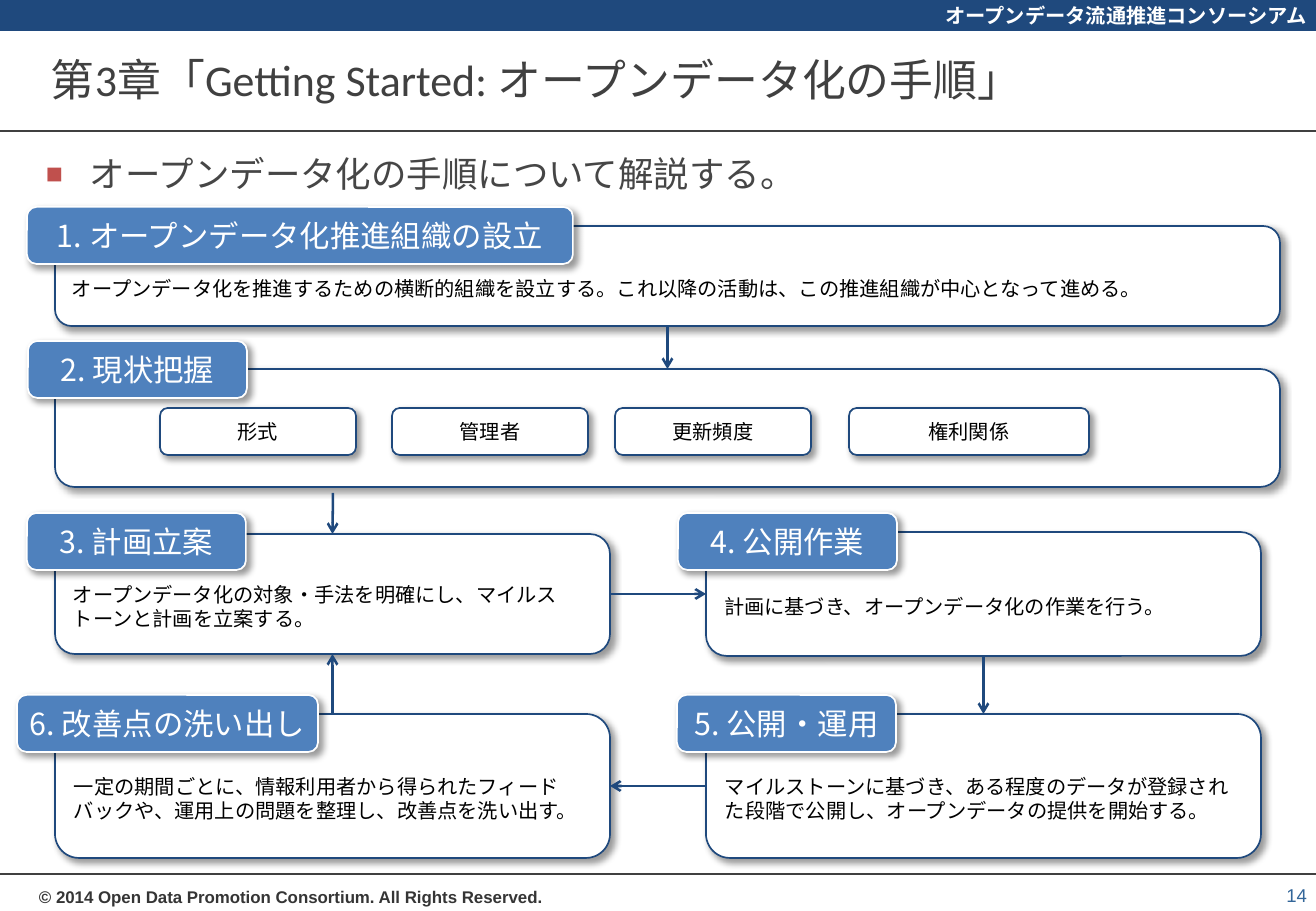
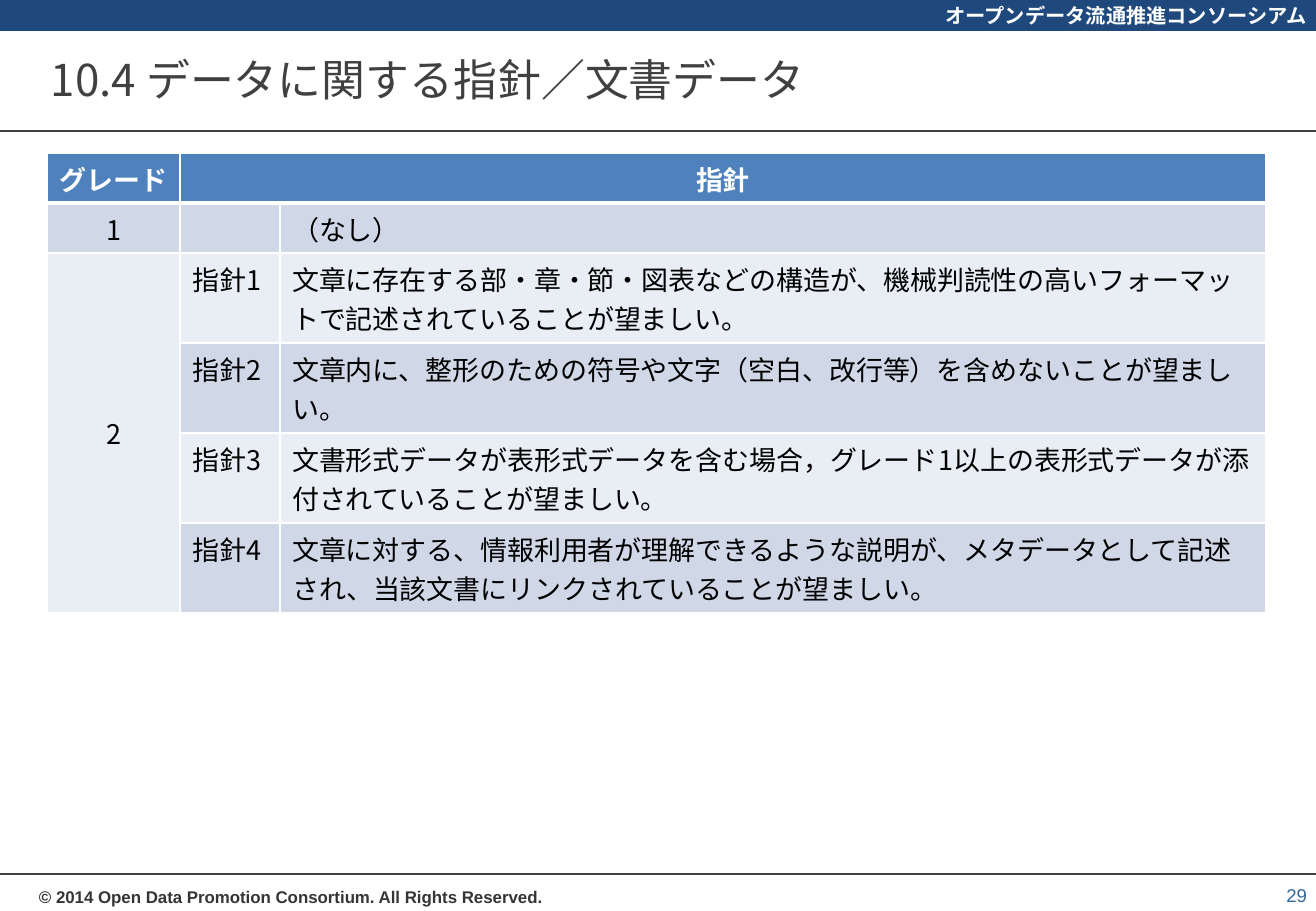
from lxml.etree import SubElement
from pptx import Presentation
from pptx.dml.color import RGBColor
from pptx.enum.shapes import MSO_CONNECTOR as LINE, MSO_SHAPE as SHAPE
from pptx.enum.text import MSO_ANCHOR as ANCHOR, PP_ALIGN as ALIGN
from pptx.oxml.ns import qn
from pptx.util import Emu, Pt

WIDTH, HEIGHT = 1316, 911
JP, LATIN, FOOT = "Noto Sans CJK JP", "Calibri", "Arial"
NAVY, BLUE, WHITE, BLACK = "1F497D", "4F81BD", "FFFFFF", "000000"
GRAY, BODY, RED = "404040", "464646", "C0504D"
COPY, PAGE = "353535", "336699"
BANDS = ("D0D8E8", "E9EDF4")
TOP, LEFT, BOTTOM, RIGHT = range(4)
PAD = (12, 6, 12, 6)
SLIM = (9, 5, 9, 5)
BLANK_LAYOUT = 6

# name: card box, badge box, text
CARDS = {
    1: ((55, 226, 1225, 100), (27, 207, 546), "オープンデータ化推進組織の設立",
        "オープンデータ化を推進するための横断的組織を設立する。これ以降の活動は、この推進組織が中心となって進める。"),
    2: ((55, 369, 1225, 118), (28, 341, 219), "現状把握", ""),
    3: ((55, 534, 555, 120), (27, 513, 219), "計画立案",
        "オープンデータ化の対象・手法を明確にし、マイルストーンと計画を立案する。"),
    4: ((706, 532, 555, 124), (678, 513, 219), "公開作業",
        "計画に基づき、オープンデータ化の作業を行う。"),
    5: ((706, 714, 555, 144), (677, 695, 219), "公開・運用",
        "マイルストーンに基づき、ある程度のデータが登録された段階で公開し、オープンデータの提供を開始する。"),
    6: ((55, 714, 555, 144), (17, 695, 301), "改善点の洗い出し",
        "一定の期間ごとに、情報利用者から得られたフィードバックや、運用上の問題を整理し、改善点を洗い出す。"),
}
ARROWS = [(1, BOTTOM, 2, TOP), (3, RIGHT, 4, LEFT), (4, BOTTOM, 5, TOP),
          (5, LEFT, 6, RIGHT), (6, TOP, 3, BOTTOM)]
CHIPS = [("形式", 160, 196), ("管理者", 392, 196),
         ("更新頻度", 615, 196), ("権利関係", 849, 240)]
GUIDELINES = [
    ("グレード", "指針", ""),
    ("1", "", "（なし）"),
    ("2", "指針1", "文章に存在する部・章・節・図表などの構造が、機械判読性の高いフォーマットで記述されていることが望ましい。"),
    ("", "指針2", "文章内に、整形のための符号や文字（空白、改行等）を含めないことが望ましい。"),
    ("", "指針3", "文書形式データが表形式データを含む場合，グレード1以上の表形式データが添付されていることが望ましい。"),
    ("", "指針4", "文章に対する、情報利用者が理解できるような説明が、メタデータとして記述され、当該文書にリンクされていることが望ましい。"),
]


def px(n):
    return Emu(n * 7526)


def rgb(color):
    return RGBColor.from_string(color)


def sub(parent, tag, **attrs):
    return SubElement(parent, qn(tag), attrs)


def write(tf, text, size, color, font=JP, bold=False, align=ALIGN.LEFT):
    tf.text = text
    p = tf.paragraphs[0]
    p.alignment = align
    for r in p.runs:
        r.font.size = Pt(size)
        r.font.bold = bold
        r.font.name = font
        r.font.color.rgb = rgb(color)
        sub(r._r.get_or_add_rPr(), "a:ea", typeface=JP)
    return p


def frame(sp, pad=PAD, anchor=ANCHOR.MIDDLE, wrap=True):
    tf = sp.text_frame
    tf.word_wrap = wrap
    tf.vertical_anchor = anchor
    tf.margin_left, tf.margin_top, tf.margin_right, tf.margin_bottom = map(px, pad)
    return tf


def add_text(s, box, text, size, color, pad=SLIM, anchor=ANCHOR.TOP, **style):
    sp = s.shapes.add_textbox(*map(px, box))
    return write(frame(sp, pad, anchor), text, size, color, **style)


def add_box(s, kind, box, fill, line, width):
    sp = s.shapes.add_shape(kind, *map(px, box))
    sp.shadow.inherit = False
    sp.fill.solid()
    sp.fill.fore_color.rgb = rgb(fill)
    sp.line.color.rgb = rgb(line)
    sp.line.width = Pt(width)
    return sp


def add_raised(s, box, fill=WHITE, line=NAVY):
    sp = add_box(s, SHAPE.ROUNDED_RECTANGLE, box, fill, line, 1)
    effects = sp._element.spPr.find(qn("a:effectLst"))
    shadow = sub(effects, "a:outerShdw", blurRad=str(Pt(4)), dist=str(Pt(3)),
                 dir="2700000", algn="tl", rotWithShape="0")
    sub(sub(shadow, "a:srgbClr", val=BLACK), "a:alpha", val="40000")
    return sp


def add_line(s, start, end, color, width, arrow=False):
    c = s.shapes.add_connector(LINE.STRAIGHT, *map(px, start + end))
    c.line.color.rgb = rgb(color)
    c.line.width = Pt(width)
    spPr = c._element.spPr
    if arrow:
        sub(spPr.find(qn("a:ln")), "a:tailEnd", type="arrow")
    sub(spPr, "a:effectLst")
    return c


def add_arrow(s, start=(0, 0), end=(0, 0)):
    return add_line(s, start, end, NAVY, 1.5, arrow=True)


def add_bullet(s, box, text):
    p = add_text(s, box, text, 21, BODY, pad=(0, 5, 0, 5))
    pPr = p._p.get_or_add_pPr()
    pPr.set("marL", str(px(44)))
    pPr.set("indent", str(px(-44)))
    sub(sub(pPr, "a:buClr"), "a:srgbClr", val=RED)
    sub(pPr, "a:buSzPct", val="80000")
    sub(pPr, "a:buFont", typeface=FOOT)
    sub(pPr, "a:buChar", char="■")


def add_page(prs, title, number, title_font=JP):
    s = prs.slides.add_slide(prs.slide_layouts[BLANK_LAYOUT])
    band = add_box(s, SHAPE.RECTANGLE, (0, 0, WIDTH, 30), NAVY, NAVY, 0.75)
    write(frame(band, SLIM), "オープンデータ流通推進コンソーシアム", 12, WHITE,
          bold=True, align=ALIGN.RIGHT)
    for y in (131, 874):
        add_line(s, (0, y), (WIDTH, y), GRAY, 1)
    add_text(s, (51, 40, 1214, 78), title, 26, GRAY, pad=(0, 0, 0, 0),
             anchor=ANCHOR.MIDDLE, font=title_font)
    add_text(s, (30, 882, 533, 29),
             "© 2014 Open Data Promotion Consortium. All Rights Reserved.",
             10, COPY, font=FOOT, bold=True)
    add_text(s, (1262, 877, 54, 34), str(number), 11, PAGE,
             anchor=ANCHOR.BOTTOM, font=FOOT, align=ALIGN.RIGHT)
    return s


def add_card(s, number, box, badge_box, heading, text):
    card = add_raised(s, box)
    if text:
        write(frame(card, (12, 31, 12, 6)), text, 12, BLACK)
    badge = add_raised(s, badge_box + (57,), BLUE, WHITE)
    write(frame(badge, wrap=False), f"{number}. {heading}", 18, WHITE,
          align=ALIGN.CENTER)
    return card


def add_steps(s):
    cards = {n: add_card(s, n, *parts) for n, parts in CARDS.items()}
    for text, x, width in CHIPS:
        chip = add_raised(s, (x, 408, width, 47))
        write(frame(chip), text, 12, BLACK, align=ALIGN.CENTER)
    for source, source_side, target, target_side in ARROWS:
        c = add_arrow(s)
        c.begin_connect(cards[source], source_side)
        c.end_connect(cards[target], target_side)
    add_arrow(s, (333, 493), (333, 534)).end_connect(cards[3], TOP)


def add_borders(cell, top, bottom):
    tcPr = cell._tc.get_or_add_tcPr()
    for tag, width in (("a:lnL", 1), ("a:lnR", 1), ("a:lnT", top), ("a:lnB", bottom)):
        fill = sub(sub(tcPr, tag, w=str(Pt(width))), "a:solidFill")
        sub(fill, "a:srgbClr", val=WHITE)


def add_guidelines(s):
    widths, heights = (133, 100, 986), (50, 50, 90, 90, 90, 90)
    box = (47, 153, sum(widths), sum(heights))
    table = s.shapes.add_table(len(heights), len(widths), *map(px, box)).table
    for column, width in zip(table.columns, widths):
        column.width = px(width)
    for i, (row, height) in enumerate(zip(table.rows, heights)):
        row.height = px(height)
        header = i == 0
        for j, cell in enumerate(row.cells):
            add_borders(cell, 3 if i == 1 else 1, 3 if header else 1)
            cell.fill.solid()
            cell.fill.fore_color.rgb = rgb(BLUE if header else BANDS[(i - 1) % 2])
            cell.vertical_anchor = ANCHOR.MIDDLE if j == 0 and not header else ANCHOR.TOP
            write(cell.text_frame, GUIDELINES[i][j], 16, WHITE if header else BLACK,
                  bold=header, align=ALIGN.CENTER if header or j == 0 else ALIGN.LEFT)
    table.cell(0, 1).merge(table.cell(0, 2))
    table.cell(2, 0).merge(table.cell(5, 0))


def main():
    prs = Presentation()
    prs.slide_width, prs.slide_height = px(WIDTH), px(HEIGHT)
    s = add_page(prs, "第3章「Getting Started: オープンデータ化の手順」", 14, LATIN)
    add_bullet(s, (46, 147, 1215, 60), "オープンデータ化の手順について解説する。")
    add_steps(s)
    s = add_page(prs, "10.4 データに関する指針／文書データ", 29)
    add_guidelines(s)
    prs.save("out.pptx")


if __name__ == "__main__":
    main()
